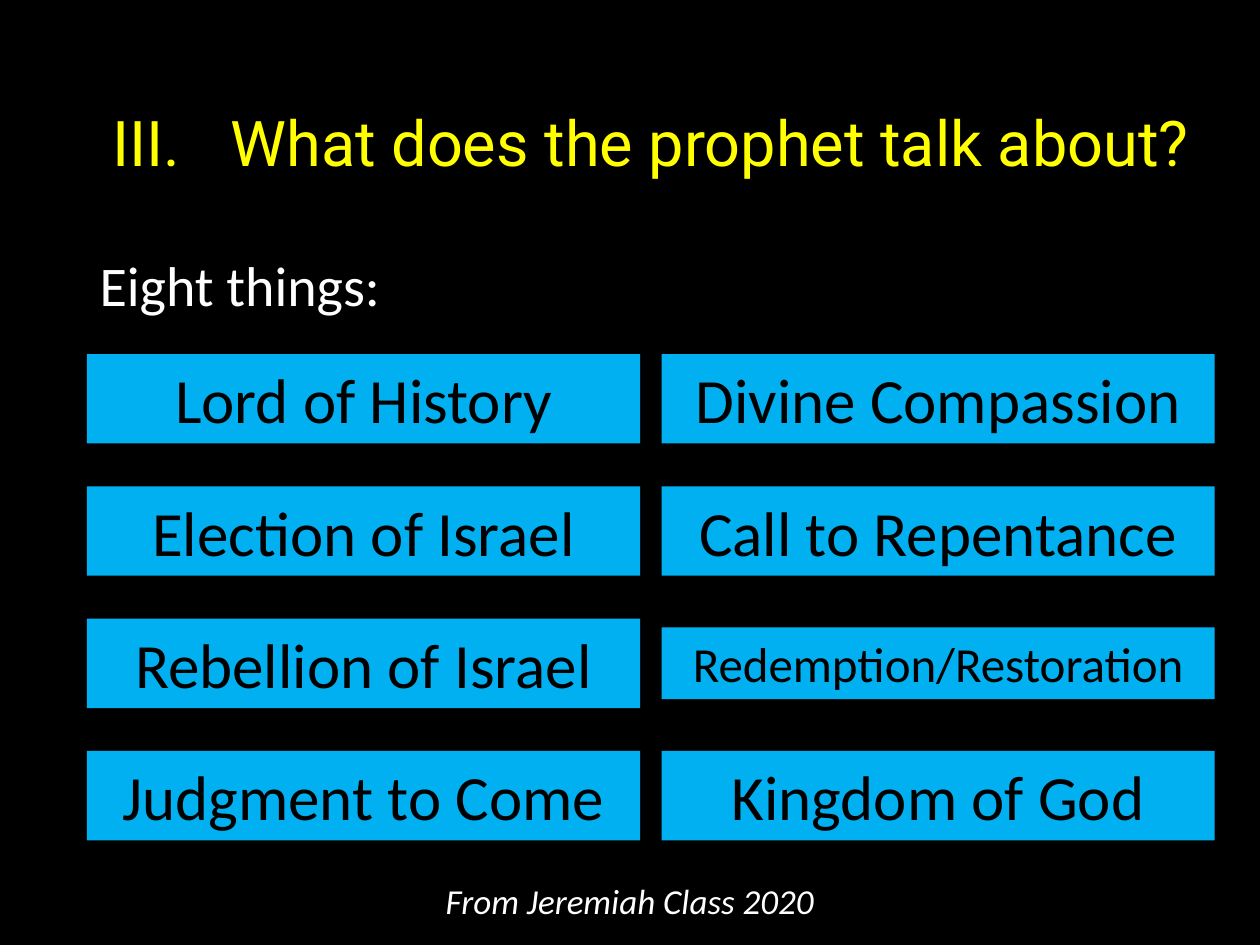
from dataclasses import dataclass
from lxml.etree import SubElement
from pptx import Presentation
from pptx.dml.color import RGBColor as RGB
from pptx.enum.shapes import MSO_SHAPE as SHAPE
from pptx.enum.text import MSO_ANCHOR as ANCHOR, MSO_AUTO_SIZE as FIT, PP_ALIGN as ALIGN
from pptx.oxml.ns import qn
from pptx.util import Inches, Pt


@dataclass(frozen=True)
class Theme:
    background: RGB = RGB(0x00, 0x00, 0x00)
    title: RGB = RGB(0xFF, 0xFF, 0x00)
    text: RGB = RGB(0xFF, 0xFF, 0xFF)
    box: RGB = RGB(0x00, 0xB0, 0xF0)
    box_text: RGB = RGB(0x00, 0x00, 0x00)
    title_font: str = "Roboto"
    body_font: str = "Calibri"
    large: int = 36
    lead: int = 32
    small: int = 28
    footer: int = 20


theme = Theme()


def place(sp, left, top, width, height):
    box = {"left": left, "top": top, "width": width, "height": height}
    for name, value in box.items():
        setattr(sp, name, Inches(value))


def write(sp, text, size, color, align, anchor, fit=FIT.NONE, font=theme.body_font, italic=False):
    tf = sp.text_frame
    for name, value in {"word_wrap": True, "auto_size": fit, "vertical_anchor": anchor}.items():
        setattr(tf, name, value)
    p = tf.paragraphs[0]
    p.alignment = align
    p.space_before = Pt(0)
    r = p.add_run()
    r.text = text
    for name, value in {"name": font, "size": Pt(size), "italic": italic}.items():
        setattr(r.font, name, value)
    r.font.color.rgb = color
    return p


prs = Presentation()
prs.slide_width, prs.slide_height = Inches(10), Inches(7.5)
s = prs.slides.add_slide(prs.slide_layouts[1])
s.background.fill.solid()
s.background.fill.fore_color.rgb = theme.background

# Title, numbered III.
title = s.shapes.title
place(title, 0.69, 0.4, 9.12, 1.45)
p = write(title, "What does the prophet talk about?", theme.large, theme.title,
          ALIGN.LEFT, ANCHOR.MIDDLE, font=theme.title_font)
pPr = p._p.get_or_add_pPr()
pPr.set("marL", str(Inches(1.04)))
pPr.set("indent", str(Inches(-0.94)))
SubElement(pPr, qn("a:buFont"), typeface="+mj-lt")
SubElement(pPr, qn("a:buAutoNum"), type="romanUcPeriod", startAt="3")

# Lead-in line
body = s.placeholders[1]
place(body, 0.69, 2, 8.62, 0.66)
p = write(body, "Eight things:", theme.lead, theme.text, ALIGN.LEFT, ANCHOR.TOP)
p.line_spacing = 0.9
pPr = p._p.get_or_add_pPr()
pPr.set("marL", "0")
pPr.set("indent", "0")
SubElement(pPr, qn("a:buNone"))

# Two columns of themes, each row centred on an even pitch
columns = [
    ["Lord of History", "Election of Israel", "Rebellion of Israel", "Judgment to Come"],
    ["Divine Compassion", "Call to Repentance", "Redemption/Restoration", "Kingdom of God"],
]
box_heights = {theme.large: 0.71, theme.small: 0.57}
for col, labels in enumerate(columns):
    for row, label in enumerate(labels):
        size = theme.small if len(label) > 20 else theme.large
        height = box_heights[size]
        middle = 3.165 + 1.05 * row
        sp = s.shapes.add_shape(SHAPE.RECTANGLE, 0, 0, 0, 0)
        place(sp, 0.69 + 4.56 * col, middle - height / 2, 4.39, height)
        sp.shadow.inherit = False
        sp.fill.solid()
        sp.fill.fore_color.rgb = theme.box
        sp.line.fill.background()
        write(sp, label, size, theme.box_text, ALIGN.CENTER, ANCHOR.MIDDLE, FIT.SHAPE_TO_FIT_TEXT)

# Footer credit
footer = s.shapes.add_textbox(Inches(3.31), Inches(6.95), Inches(3.38), Inches(0.4))
write(footer, "From Jeremiah Class 2020", theme.footer, theme.text,
      ALIGN.CENTER, ANCHOR.MIDDLE, italic=True)

prs.save("out.pptx")
